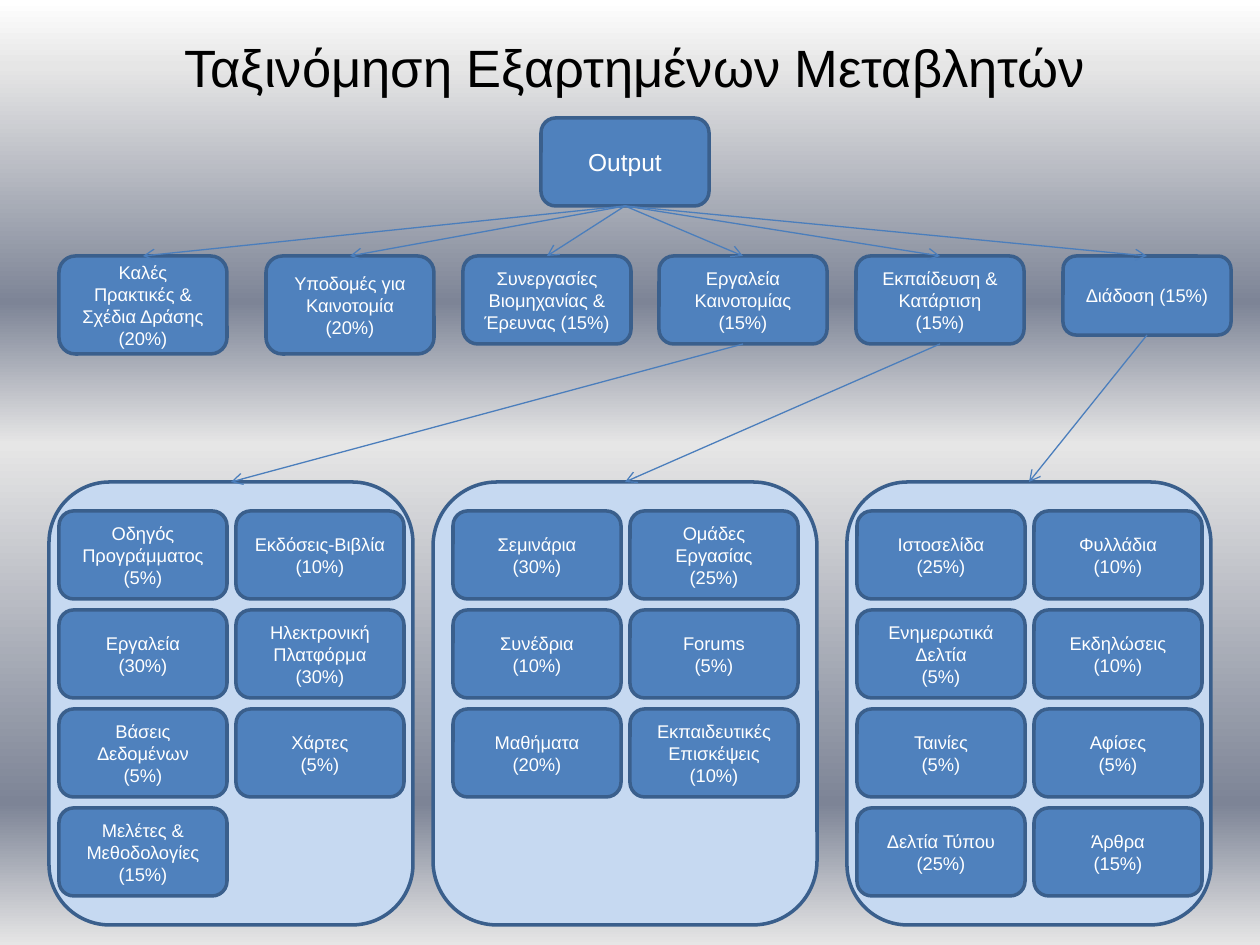
from lxml import etree
from pptx import Presentation
from pptx import util as u
from pptx.dml.color import RGBColor
from pptx.enum import shapes, text
from pptx.oxml.ns import qn

PX_PER_INCH = 126
FONT = "Arial"
BLUE, PALE, OUTLINE, ARROW = "4F81BD", "C6D9F1", "3A5F8C", "4B7EBC"
TOP, BOTTOM = 0, 2  # connection sites of a rounded rectangle
BOX_WIDTH, BOX_HEIGHT = 168, 88
CELL_STEP_X, CELL_STEP_Y = 177, 99

BACKGROUND = [(0, "FFFFFF"), (7, "E6E6E6"), (32, "7D8496"),
              (47, "E6E6E6"), (85, "7D8496"), (100, "E6E6E6")]

# Left, height, label
CATEGORIES = [
    (59, 98, "Καλές Πρακτικές & Σχέδια Δράσης (20%)"),
    (266, 98, "Υποδομές για Καινοτομία (20%)"),
    (463, 88, "Συνεργασίες Βιομηχανίας & Έρευνας (15%)"),
    (659, 88, "Εργαλεία Καινοτομίας (15%)"),
    (856, 88, "Εκπαίδευση & Κατάρτιση (15%)"),
    (1063, 79, "Διάδοση (15%)"),
]

# Left, width, left padding, labels row by row
PANELS = [
    (49, 364, 10, ["Οδηγός Προγράμματος (5%)", "Εκδόσεις-Βιβλία\n(10%)",
                   "Εργαλεία\n(30%)", "Ηλεκτρονική Πλατφόρμα\n(30%)",
                   "Βάσεις Δεδομένων\n(5%)", "Χάρτες\n(5%)",
                   "Μελέτες & Μεθοδολογίες\n(15%)"]),
    (433, 384, 20, ["Σεμινάρια\n(30%)", "Ομάδες Εργασίας\n(25%)",
                    "Συνέδρια\n(10%)", "Forums\n(5%)",
                    "Μαθήματα\n(20%)", "Εκπαιδευτικές\nΕπισκέψεις\n(10%)"]),
    (847, 364, 10, ["Ιστοσελίδα\n(25%)", "Φυλλάδια\n(10%)",
                    "Ενημερωτικά\nΔελτία\n(5%)", "Εκδηλώσεις\n(10%)",
                    "Ταινίες\n(5%)", "Αφίσες\n(5%)",
                    "Δελτία Τύπου\n(25%)", "Άρθρα\n(15%)"]),
]


def px(length):
    return u.Emu(round(length * 914400 / PX_PER_INCH))


def color(value):
    return RGBColor.from_string(value)


def write(frame, label, size, value):
    for index, line in enumerate(label.split("\n")):
        paragraph = frame.paragraphs[0] if index == 0 else frame.add_paragraph()
        paragraph.alignment = text.PP_ALIGN.CENTER
        run = paragraph.add_run()
        run.text = line
        run.font.name = FONT
        run.font.size = u.Pt(size)
        run.font.color.rgb = color(value)


def add_box(slide, left, top, width, height, fill, label="", size=10.5):
    shape = slide.shapes.add_shape(shapes.MSO_SHAPE.ROUNDED_RECTANGLE,
                                   px(left), px(top), px(width), px(height))
    shape.shadow.inherit = False
    shape.fill.solid()
    shape.fill.fore_color.rgb = color(fill)
    shape.line.color.rgb = color(OUTLINE)
    shape.line.width = u.Pt(2)
    if label:
        shape.text_frame.word_wrap = True
        shape.text_frame.vertical_anchor = text.MSO_ANCHOR.MIDDLE
        write(shape.text_frame, label, size, "FFFFFF")
    return shape


def add_arrow(slide, source, target):
    connector = slide.shapes.add_connector(shapes.MSO_CONNECTOR.STRAIGHT, 0, 0, 0, 0)
    connector.begin_connect(source, BOTTOM)
    connector.end_connect(target, TOP)
    connector.line.color.rgb = color(ARROW)
    connector.line.width = u.Pt(0.75)
    properties = connector.element.spPr
    etree.SubElement(properties.find(qn("a:ln")), qn("a:tailEnd"), type="arrow")
    etree.SubElement(properties, qn("a:effectLst"))


def paint_background(slide):
    fill = slide.background.fill
    fill.gradient()
    fill.gradient_angle = 270
    stops = next(slide.element.iter(qn("a:gsLst")))
    for stop in list(stops):
        stops.remove(stop)
    for percent, value in BACKGROUND:
        stop = etree.SubElement(stops, qn("a:gs"), pos=str(percent * 1000))
        etree.SubElement(stop, qn("a:srgbClr"), val=value)


def add_title(slide, left, top, width, height):
    title = slide.shapes.title
    title.left, title.top = px(left), px(top)
    title.width, title.height = px(width), px(height)
    frame = title.text_frame
    frame.auto_size = text.MSO_AUTO_SIZE.NONE
    frame.vertical_anchor = text.MSO_ANCHOR.TOP
    write(frame, "Ταξινόμηση Εξαρτημένων Μεταβλητών", 30, "000000")


def add_panel(slide, left, top, width, height, padding, labels):
    panel = add_box(slide, left, top, width, height, PALE)
    for index, label in enumerate(labels):
        row, column = divmod(index, 2)
        add_box(slide, left + padding + column * CELL_STEP_X,
                top + 29 + row * CELL_STEP_Y, BOX_WIDTH, BOX_HEIGHT, BLUE, label)
    return panel


def main():
    presentation = Presentation()
    presentation.slide_width, presentation.slide_height = px(1260), px(945)
    slide = presentation.slides.add_slide(presentation.slide_layouts[5])
    paint_background(slide)
    add_title(slide, 0, 29, 1270, 77)

    # Tree: root, categories and detail panels
    root = add_box(slide, 541, 118, BOX_WIDTH, BOX_HEIGHT, BLUE, "Output", 14)
    categories = [add_box(slide, left, 256, BOX_WIDTH, height, BLUE, label)
                  for left, height, label in CATEGORIES]
    panels = [add_panel(slide, left, 482, width, 443, padding, labels)
              for left, width, padding, labels in PANELS]

    # Arrows: root to every category, last three categories to their panels
    for category in categories:
        add_arrow(slide, root, category)
    for category, panel in zip(categories[3:], panels):
        add_arrow(slide, category, panel)

    presentation.save("out.pptx")


if __name__ == "__main__":
    main()
